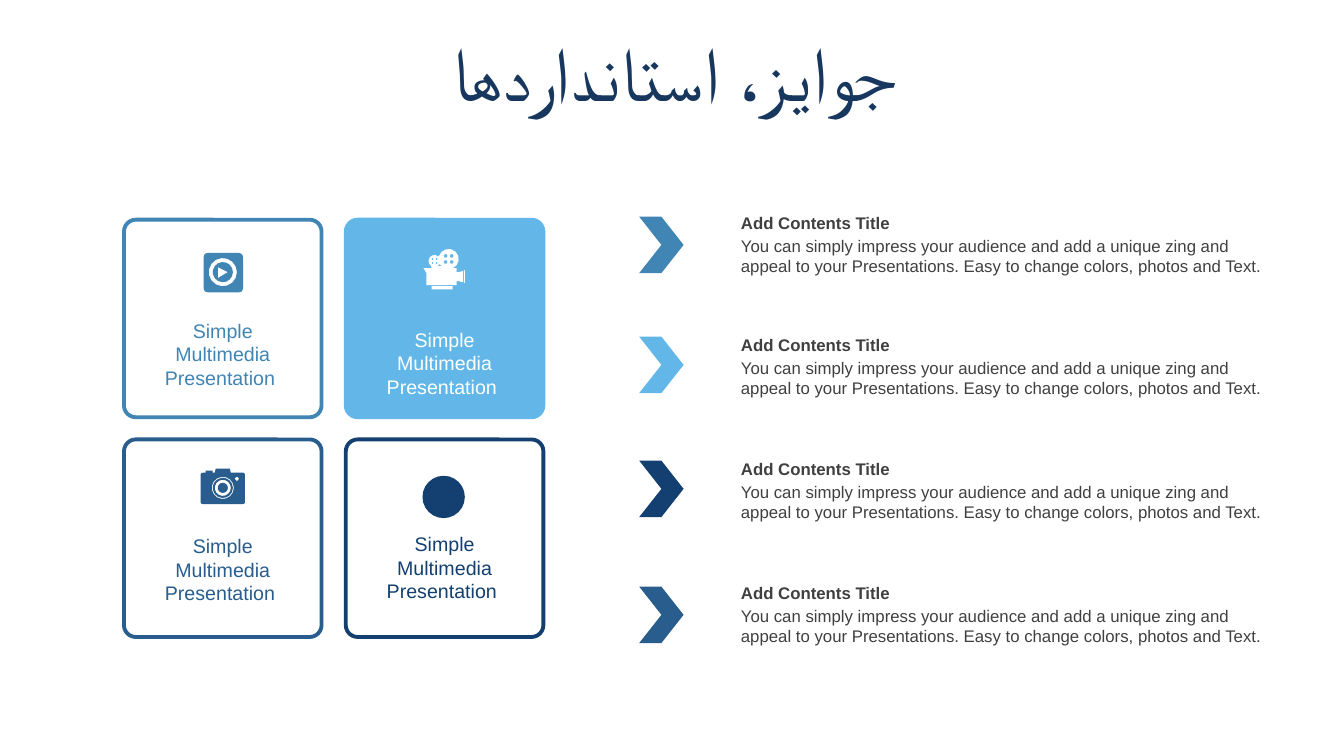
from math import cos, radians, sin

from lxml import etree
from pptx import Presentation
from pptx.dml.color import RGBColor
from pptx.enum.shapes import MSO_SHAPE
from pptx.enum.text import MSO_ANCHOR, MSO_AUTO_SIZE, PP_ALIGN
from pptx.oxml.ns import qn
from pptx.util import Inches, Pt

ROUND_RECT = MSO_SHAPE.ROUNDED_RECTANGLE
CHEVRON = MSO_SHAPE.CHEVRON
OVAL = MSO_SHAPE.OVAL
CENTER = PP_ALIGN.CENTER
MIDDLE = MSO_ANCHOR.MIDDLE
FIT_SHAPE = MSO_AUTO_SIZE.SHAPE_TO_FIT_TEXT
NO_FIT = MSO_AUTO_SIZE.NONE

STEEL, SKY, BLUE, NAVY = "4185B5", "62B7E8", "285D8D", "134070"
WHITE, GRAY, TITLE = "FFFFFF", "404040", "17375E"

CARD_TEXT = "Simple Multimedia Presentation "
ITEM_TITLE = "Add Contents Title"
ITEM_TEXT = (
    "You can simply impress your audience and add a unique zing and "
    "appeal to your Presentations. Easy to change colors, photos and Text."
)


def rgb(value):
    return RGBColor.from_string(value)


def arc(cx, cy, r, start, end, step=30):
    """Points in inches along an arc, clockwise, with angles in degrees."""
    count = max(1, round((end - start) / step))
    angles = [radians(start + (end - start) * i / count) for i in range(count + 1)]
    return [(cx + r * cos(a), cy + r * sin(a)) for a in angles]


def circle(cx, cy, r):
    step = 24 if r > 0.03 else 60
    return arc(cx, cy, r, 0, 360 - step, step)


def rounded_box(x, y, w, h, r, top=()):
    """Outline of a rounded box; extra points in top interrupt its upper edge."""
    right, bottom = x + w - r, y + h - r
    return (
        arc(x + r, y + r, r, 180, 270) + list(top)
        + arc(right, y + r, r, 270, 360)
        + arc(right, bottom, r, 0, 90)
        + arc(x + r, bottom, r, 90, 180)
    )


def reel_holes(cx, cy, offset, r):
    return [circle(cx + dx, cy + dy, r) for dx in (-offset, offset) for dy in (-offset, offset)]


def play_icon():
    cx, cy = 2.21, 2.7
    return [
        rounded_box(2.02, 2.51, 0.39, 0.39, 0.04),
        circle(cx, cy, 0.14),
        circle(cx, cy, 0.1),
        [(2.16, 2.65), (2.26, 2.7), (2.16, 2.76)],
    ]


def film_icon():
    outline = (
        arc(4.45, 2.57, 0.1, 197, 426)
        + [(4.53, 2.66), (4.53, 2.7), (4.55, 2.7), (4.59, 2.69), (4.59, 2.8),
           (4.55, 2.79), (4.53, 2.79), (4.53, 2.83), (4.23, 2.83), (4.23, 2.71),
           (4.2, 2.66), (4.28, 2.66)]
        + arc(4.31, 2.59, 0.06, 121, 309)
    )
    return [
        outline,
        *reel_holes(4.45, 2.57, 0.03, 0.02),
        *reel_holes(4.31, 2.59, 0.02, 0.01),
        [(4.36, 2.62), (4.38, 2.64), (4.34, 2.64)],
        [(4.28, 2.84), (4.49, 2.84), (4.49, 2.87), (4.28, 2.87)],
        [(4.6, 2.68), (4.61, 2.68), (4.61, 2.81), (4.6, 2.8)],
    ]


def camera_icon():
    top = [(2.04, 4.69), (2.04, 4.67), (2.11, 4.67), (2.11, 4.69),
           (2.13, 4.69), (2.14, 4.65), (2.28, 4.65), (2.29, 4.69)]
    lens = [circle(2.21, 4.84, r) for r in (0.11, 0.1, 0.08, 0.05)]
    return [rounded_box(1.99, 4.69, 0.44, 0.31, 0.02, top), *lens, circle(2.35, 4.75, 0.02)]


class SlideBuilder:
    """Holds the slide and the style shared by its elements."""

    font = "Arial"

    def __init__(self, prs):
        self.s = prs.slides.add_slide(prs.slide_layouts[5])

    def format_text(self, p, size, color, bold=False):
        p.font.name = self.font
        p.font.size = Pt(size)
        p.font.bold = bold
        p.font.color.rgb = rgb(color)

    def title(self, text, x, y, w, h):
        sp = self.s.shapes.title
        sp.left, sp.top, sp.width, sp.height = map(Inches, (x, y, w, h))
        tf = sp.text_frame
        tf.text = text
        tf.auto_size = NO_FIT
        tf.vertical_anchor = MIDDLE
        p = tf.paragraphs[0]
        p.alignment = CENTER
        p.line_spacing = 0.9
        p.space_before = Pt(10)
        self.format_text(p, 54, TITLE)
        r = p.runs[0]
        r.font.name = self.font
        # Persian letters take the complex-script font
        etree.SubElement(r.font._element, qn("a:cs"), typeface=self.font)

    def paint(self, sp, fill, line=None):
        sp.shadow.inherit = False
        sp.fill.solid()
        sp.fill.fore_color.rgb = rgb(fill)
        if line:
            sp.line.color.rgb = rgb(line)
            sp.line.width = Pt(2.75)
        else:
            sp.line.fill.background()

    def shape(self, kind, x, y, w, h, fill, line=None):
        sp = self.s.shapes.add_shape(kind, *map(Inches, (x, y, w, h)))
        self.paint(sp, fill, line)
        return sp

    def icon(self, contours, fill):
        """Draw closed contours as one freeform; inner contours become holes."""
        first, *others = [[(Inches(x), Inches(y)) for x, y in c] for c in contours]
        builder = self.s.shapes.build_freeform(*first[0])
        builder.add_line_segments(first[1:], close=True)
        for points in others:
            builder.move_to(*points[0])
            builder.add_line_segments(points[1:], close=True)
        self.paint(builder.convert_to_shape(), fill)

    def text(self, text, x, y, w, h, size, color, bold=False, align=None, group=None):
        shapes = (group or self.s).shapes
        tf = shapes.add_textbox(*map(Inches, (x, y, w, h))).text_frame
        tf.word_wrap = True
        tf.auto_size = FIT_SHAPE
        tf.text = text
        p = tf.paragraphs[0]
        p.alignment = align
        self.format_text(p, size, color, bold)

    def card(self, x, y, text_y, fill, line, text_color):
        sp = self.shape(ROUND_RECT, x, y, 1.96, 1.96, fill, line)
        sp.adjustments[0] = 0.06
        self.text(CARD_TEXT, x + 0.23, text_y, 1.5, 0.81, 14, text_color, align=CENTER)

    def item(self, y, chevron_y, color):
        self.shape(CHEVRON, 6.34, chevron_y, 0.44, 0.56, color)
        group = self.s.shapes.add_group_shape()
        self.text(ITEM_TEXT, 7.25, y + 0.23, 5.39, 0.5, 12, GRAY, group=group)
        self.text(ITEM_TITLE, 7.25, y, 5.39, 0.3, 12, GRAY, bold=True, group=group)


def main():
    prs = Presentation()
    prs.slide_width, prs.slide_height = Inches(13.33), Inches(7.5)
    slide = SlideBuilder(prs)
    slide.title("جوایز، استانداردها", 0.35, 0.37, 12.66, 0.79)

    left, right, upper, lower = 1.23, 3.43, 2.18, 4.36
    slide.card(left, upper, 3.11, WHITE, STEEL, STEEL)
    slide.card(right, upper, 3.2, SKY, SKY, WHITE)
    slide.card(left, lower, 5.25, WHITE, BLUE, BLUE)
    slide.card(right, lower, 5.23, WHITE, NAVY, NAVY)

    slide.icon(play_icon(), STEEL)
    slide.icon(film_icon(), WHITE)
    slide.icon(camera_icon(), BLUE)
    slide.shape(OVAL, 4.19, 4.72, 0.42, 0.42, NAVY)

    items = ((2.06, 2.15, STEEL), (3.27, 3.34, SKY), (4.5, 4.57, NAVY), (5.73, 5.82, BLUE))
    for y, chevron_y, color in items:
        slide.item(y, chevron_y, color)

    prs.save("out.pptx")


if __name__ == "__main__":
    main()
